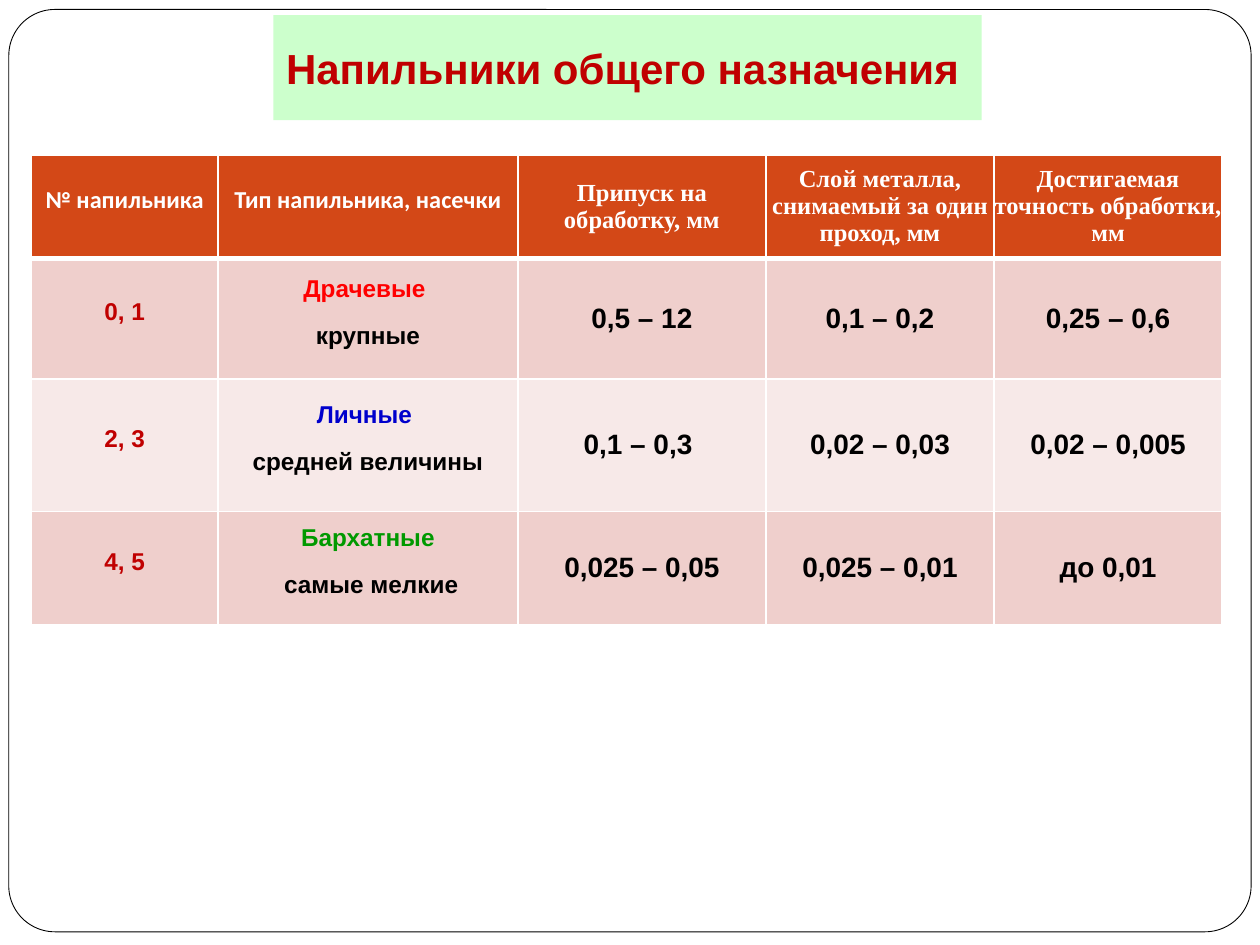
from lxml import etree
from pptx import Presentation
from pptx.dml.color import RGBColor
from pptx.enum.shapes import MSO_SHAPE
from pptx.enum.text import MSO_ANCHOR, MSO_AUTO_SIZE, PP_ALIGN
from pptx.oxml.ns import qn
from pptx.util import Inches, Pt

ROUNDED = MSO_SHAPE.ROUNDED_RECTANGLE
MIDDLE = MSO_ANCHOR.MIDDLE
GROW = MSO_AUTO_SIZE.SHAPE_TO_FIT_TEXT
LEFT, CENTER = PP_ALIGN.LEFT, PP_ALIGN.CENTER

WHITE = RGBColor(0xFF, 0xFF, 0xFF)
BLACK = RGBColor(0x00, 0x00, 0x00)
MINT = RGBColor(0xCC, 0xFF, 0xCC)
DARK_RED = RGBColor(0xC0, 0x00, 0x00)
RED = RGBColor(0xFF, 0x00, 0x00)
BLUE = RGBColor(0x00, 0x00, 0xCC)
GREEN = RGBColor(0x00, 0x99, 0x00)
ORANGE = RGBColor(0xD3, 0x48, 0x17)
ROSE = RGBColor(0xEF, 0xCF, 0xCC)
PALE_ROSE = RGBColor(0xF7, 0xE9, 0xE8)

WIDTH, HEIGHT = 10, 7.5
TITLE_ONLY = 5
LABEL_COLUMNS = 2  # raised 24 pt labels; the other columns hold figures

HEADINGS = ["№ напильника", "Тип напильника, насечки", "Припуск на обработку, мм",
            "Слой металла, снимаемый за один проход, мм",
            "Достигаемая точность обработки, мм"]
FILES = [
    ("0, 1", "Драчевые ", RED, "крупные", ["0,5 – 12", "0,1 – 0,2", "0,25 – 0,6"]),
    ("2, 3", "Личные ", BLUE, "средней величины",
     ["0,1 – 0,3 ", "0,02 – 0,03", "0,02 – 0,005"]),
    ("4, 5", "Бархатные", GREEN, " самые мелкие",
     ["0,025 – 0,05", "0,025 – 0,01", "до 0,01"]),
]


class SlideBuilder:
    """Holds the slide and its style; positions are shares of the slide's size."""

    def __init__(self, deck):
        self.slide = deck.slides.add_slide(deck.slide_layouts[TITLE_ONLY])
        self.shapes = self.slide.shapes

    def box(self, left, top, width, height):
        return (Inches(left * WIDTH), Inches(top * HEIGHT),
                Inches(width * WIDTH), Inches(height * HEIGHT))

    def run(self, paragraph, text, size, color, font="Arial", bold=True, raised=False):
        run = paragraph.add_run()
        run.text = text
        run.font.size = Pt(size)
        run.font.name = font
        run.font.bold = bold
        run.font.color.rgb = color
        if raised:
            run.font._element.set("baseline", "30000")

    def frame(self, *share):
        frame = self.shapes.add_shape(ROUNDED, *self.box(*share))
        frame.adjustments[0] = 0.05
        frame.shadow.inherit = False
        frame.fill.solid()
        frame.fill.fore_color.rgb = WHITE
        frame.line.color.rgb = BLACK
        frame.line.width = Pt(0.5)
        # Behind the title
        self.shapes._spTree.insert(2, frame._element)

    def title(self, text, *share):
        title = self.shapes.title
        title.left, title.top, title.width, title.height = self.box(*share)
        title.fill.solid()
        title.fill.fore_color.rgb = MINT
        body = title.text_frame
        body.word_wrap = False
        body.auto_size = GROW
        body.vertical_anchor = MIDDLE
        heading = body.paragraphs[0]
        heading.alignment = LEFT
        self.run(heading, text, 24, DARK_RED)
        self.run(heading, " ", 18, DARK_RED, bold=False)

    def borders(self, cell, bottom):
        properties = cell._tc.get_or_add_tcPr()
        for side, width in (("L", 1), ("R", 1), ("T", 1), ("B", bottom)):
            line = etree.SubElement(properties, qn("a:ln" + side), w=str(Pt(width)))
            fill = etree.SubElement(line, qn("a:solidFill"))
            etree.SubElement(fill, qn("a:srgbClr"), val=str(WHITE))

    def cell(self, cell, lines, fill, size, font="Arial", is_label=False, bottom=1):
        self.borders(cell, bottom)
        cell.fill.solid()
        cell.fill.fore_color.rgb = fill
        cell.vertical_anchor = MIDDLE
        cell.margin_left = cell.margin_right = Inches(0.1 if is_label else 0)
        cell.margin_top = cell.margin_bottom = Inches(0.05 if is_label else 0)
        body = cell.text_frame
        for number, (text, color) in enumerate(lines):
            paragraph = body.add_paragraph() if number else body.paragraphs[0]
            paragraph.alignment = CENTER
            self.run(paragraph, text, size, color, font, raised=is_label)

    def table(self, columns, rows, *share):
        table = self.shapes.add_table(len(rows), len(columns), *self.box(*share)).table
        for column, width in zip(table.columns, columns):
            column.width = Inches(width)
        for row, height in zip(table.rows, rows):
            row.height = Inches(height)
        return table


def main():
    deck = Presentation()
    deck.slide_width, deck.slide_height = Inches(WIDTH), Inches(HEIGHT)
    page = SlideBuilder(deck)

    # Page frame and title
    page.frame(0.007, 0.01, 0.986, 0.976)
    page.title("Напильники общего назначения", 0.217, 0.038, 0.562, 0.067)

    # Table of files
    table = page.table([1.48, 2.38, 1.97, 1.81, 1.81], [0.82, 0.96, 1.05, 0.79],
                       0.025, 0.164, 0.945, 0.483)

    # Heading row
    for column, heading in enumerate(HEADINGS):
        is_label = column < LABEL_COLUMNS
        size, font = (24, "Calibri") if is_label else (14, "Times New Roman")
        page.cell(table.cell(0, column), [(heading, WHITE)], ORANGE, size, font,
                  is_label, bottom=3)

    # One banded row for each type of file
    for row, (numbers, kind, color, teeth, figures) in enumerate(FILES, 1):
        band = ROSE if row % 2 else PALE_ROSE
        contents = [[(numbers, DARK_RED)], [(kind, color), (teeth, BLACK)]]
        contents += [[(figure, BLACK)] for figure in figures]
        for column, lines in enumerate(contents):
            is_label = column < LABEL_COLUMNS
            page.cell(table.cell(row, column), lines, band, 24 if is_label else 16,
                      is_label=is_label)

    deck.save("out.pptx")


if __name__ == "__main__":
    main()
